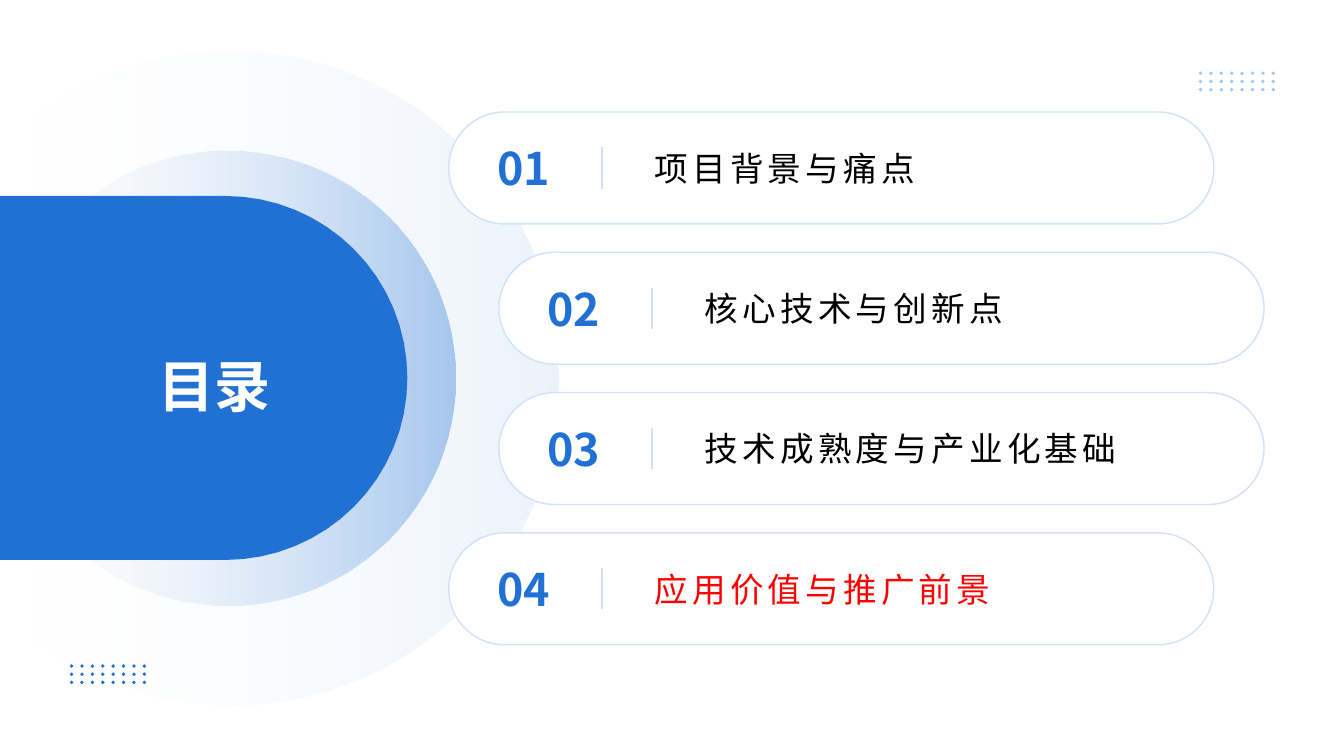
from math import acos, cos, pi, sin

from lxml import etree
from pptx import Presentation
from pptx.dml.color import RGBColor
from pptx.enum.shapes import MSO_CONNECTOR, MSO_SHAPE
from pptx.enum.text import MSO_ANCHOR, MSO_AUTO_SIZE, PP_ALIGN
from pptx.oxml.ns import qn
from pptx.util import Pt

BLUE = RGBColor(0x20, 0x71, 0xD3)
LIGHT_BLUE = RGBColor(0xA2, 0xC6, 0xF1)
PALE_BLUE = RGBColor(0xD1, 0xE2, 0xF8)
WHITE = RGBColor(0xFF, 0xFF, 0xFF)
BLACK = RGBColor(0, 0, 0)
RED = RGBColor(0xFF, 0, 0)

PILL, DONUT = MSO_SHAPE.ROUNDED_RECTANGLE, MSO_SHAPE.DONUT
STRAIGHT = MSO_CONNECTOR.STRAIGHT
MIDDLE = MSO_ANCHOR.MIDDLE
LEFT, CENTER = PP_ALIGN.LEFT, PP_ALIGN.CENTER
NO_AUTOFIT = MSO_AUTO_SIZE.NONE

CJK_FONT = "Noto Sans CJK SC"
TITLE_FONT = "Arial"

CHAPTERS = [
    ("项目背景与痛点", 320.5, BLACK),
    ("核心技术与创新点", 356.4, BLACK),
    ("技术成熟度与产业化基础", 356.4, BLACK),
    ("应用价值与推广前景", 320.5, RED),
]
CHAPTER_TOP, CHAPTER_PITCH = 80, 100.2
CHAPTER_WIDTH, CHAPTER_HEIGHT = 546.5, 80


def arc(center_x, center_y, radius, half_angle, steps):
    """Points along an arc that is symmetric about the rightward axis."""
    angles = [half_angle * (2 * i / steps - 1) for i in range(steps + 1)]
    return [(Pt(center_x + radius * cos(a)), Pt(center_y + radius * sin(a)))
            for a in angles]


def fill_solid(shape, color):
    shape.shadow.inherit = False
    shape.fill.solid()
    shape.fill.fore_color.rgb = color
    shape.line.fill.background()


def fill_fading(shape, opacity):
    """Blue at the right edge, fading to nothing at the left."""
    shape.shadow.inherit = False
    shape.line.fill.background()
    shape.fill.gradient()
    shape.fill.gradient_angle = 180
    for stop, color, position in zip(shape.fill.gradient_stops, (BLUE, PALE_BLUE), (0, 1)):
        stop.color.rgb = color
        stop.position = position
    stop_colors = shape.element.xpath(".//a:gsLst//a:srgbClr")
    for stop_color, percent in zip(stop_colors, (opacity, 0)):
        etree.SubElement(stop_color, qn("a:alpha")).set("val", str(percent * 1000))


def add_outline(slide, points):
    builder = slide.shapes.build_freeform(*points[0])
    builder.add_line_segments(points[1:], close=True)
    return builder.convert_to_shape()


def add_dots(slide, left, top, color):
    """Field of 8 by 3 tiny four-sided dots drawn as one shape."""
    radius, pitch_x, pitch_y = 1.35, 7.43, 5.83
    dots = [arc(left + radius + col * pitch_x, top + radius + row * pitch_y, radius, pi, 4)
            for row in range(3) for col in range(8)]
    builder = slide.shapes.build_freeform(*dots[0][0])
    for dot in dots:
        builder.move_to(*dot[0])
        builder.add_line_segments(dot[1:-1], close=True)
    fill_solid(builder.convert_to_shape(), color)


def add_title_panel(slide, middle):
    # Halo cut off by the slide edge
    center_x, radius = 165, 234
    halo = add_outline(slide, arc(center_x, middle, radius, acos(-center_x / radius), 48))
    fill_fading(halo, 9)

    # Ring
    ring_size = 325.6
    ring = slide.shapes.add_shape(DONUT, 0, Pt(middle - ring_size / 2),
                                  Pt(ring_size), Pt(ring_size))
    ring.adjustments[0] = 0.239
    fill_fading(ring, 36)

    # Banner with a round right end
    banner_radius = 130
    banner = add_outline(slide, [(0, Pt(middle - banner_radius)),
                                 *arc(161, middle, banner_radius, pi / 2, 32),
                                 (0, Pt(middle + banner_radius))])
    fill_solid(banner, BLUE)

    # Title, brought in front of the banner
    title = slide.shapes.title
    title.element.getparent().append(title.element)
    title.left, title.top = Pt(105.8), Pt(middle - 42.5)
    title.width, title.height = Pt(152), Pt(85)
    frame = title.text_frame
    frame.auto_size = NO_AUTOFIT
    frame.vertical_anchor = MIDDLE
    paragraph = frame.paragraphs[0]
    paragraph.alignment = LEFT
    paragraph.line_spacing = 1.2
    run = paragraph.add_run()
    run.text = "目录"
    run.font.name = TITLE_FONT
    run.font.size = Pt(40)
    run.font.bold = True
    run.font.color.rgb = WHITE


def add_label(slide, box, text, size, color, bold=False, wrap=True, align=LEFT, spacing=0):
    label = slide.shapes.add_textbox(*(Pt(v) for v in box))
    frame = label.text_frame
    frame.margin_left = frame.margin_right = frame.margin_top = frame.margin_bottom = 0
    frame.word_wrap = wrap
    frame.vertical_anchor = MIDDLE
    paragraph = frame.paragraphs[0]
    paragraph.alignment = align
    run = paragraph.add_run()
    run.text = text
    run.font.size = Pt(size)
    run.font.bold = bold
    run.font.color.rgb = color
    run.font.name = CJK_FONT
    properties = run.font._element
    etree.SubElement(properties, qn("a:ea")).set("typeface", CJK_FONT)
    if spacing:
        properties.set("spc", str(spacing * 100))


def add_chapter(slide, left, top, number, heading, color):
    # Pill
    pill = slide.shapes.add_shape(PILL, Pt(left), Pt(top), Pt(CHAPTER_WIDTH), Pt(CHAPTER_HEIGHT))
    pill.adjustments[0] = 0.5
    fill_solid(pill, WHITE)
    pill.line.color.rgb = PALE_BLUE
    pill.line.width = Pt(1)

    # Number and heading
    add_label(slide, (left + 19, top + 10.4, 69, 59), number, 32, BLUE,
              bold=True, wrap=False, align=CENTER)
    add_label(slide, (left + 147, top + 10.4, 384, 59), heading, 24, color, spacing=3)

    # Divider
    divider_x = Pt(left + 109.4)
    divider = slide.shapes.add_connector(STRAIGHT, divider_x, Pt(top + 25.2),
                                         divider_x, Pt(top + 54.7))
    divider.line.color.rgb = PALE_BLUE
    divider.line.width = Pt(1.5)
    etree.SubElement(divider.element.spPr, qn("a:effectLst"))


def main():
    presentation = Presentation()
    presentation.slide_width, presentation.slide_height = Pt(960), Pt(540)
    title_only = presentation.slide_layouts[5]
    slide = presentation.slides.add_slide(title_only)

    add_title_panel(slide, 270)
    add_dots(slide, 49.8, 474.4, BLUE)
    add_dots(slide, 856.2, 51, LIGHT_BLUE)
    for index, (heading, left, color) in enumerate(CHAPTERS):
        add_chapter(slide, left, CHAPTER_TOP + index * CHAPTER_PITCH,
                    f"{index + 1:02}", heading, color)

    presentation.save("out.pptx")


if __name__ == "__main__":
    main()
